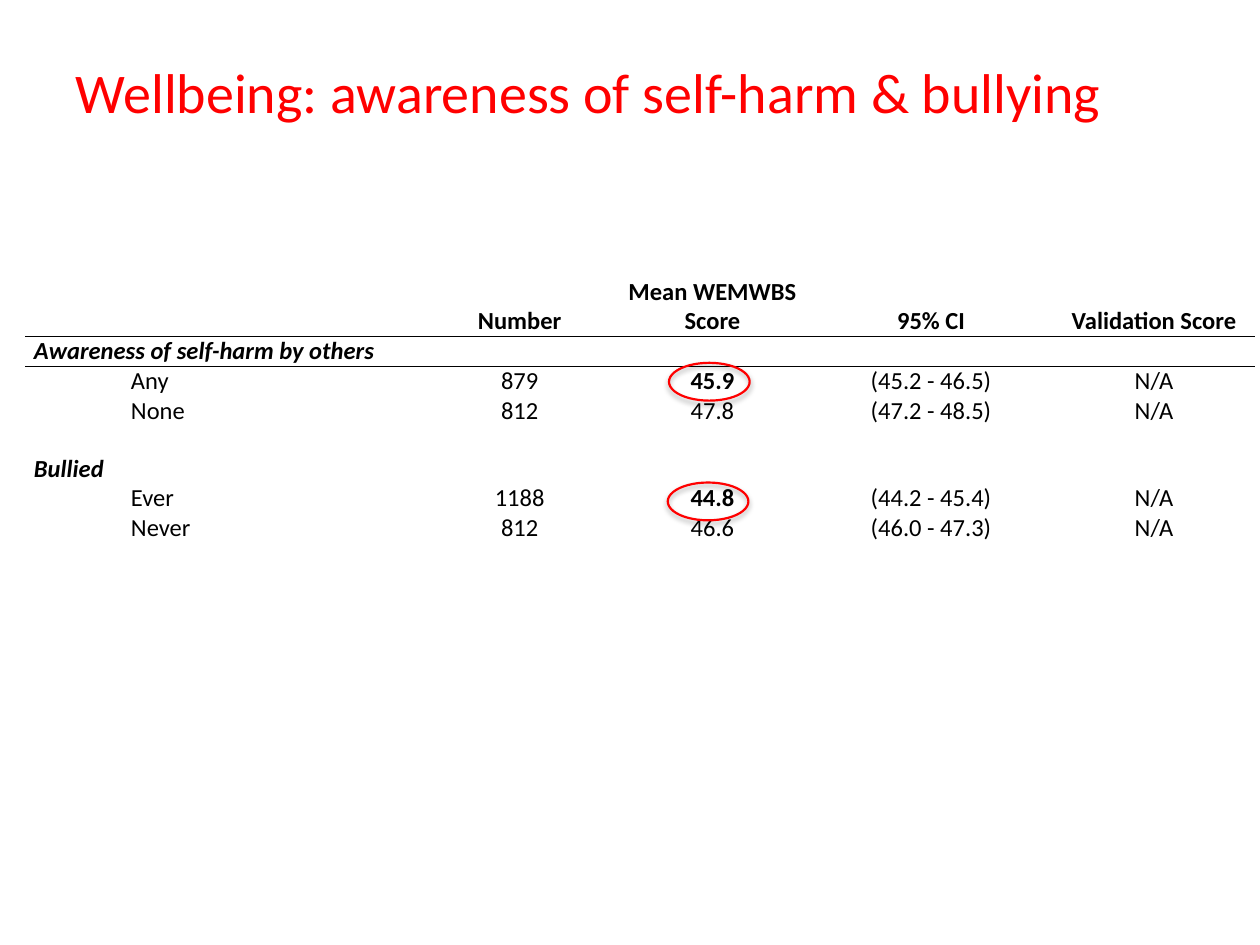
from lxml.etree import SubElement
from pptx import Presentation
from pptx.dml.color import RGBColor
from pptx.enum.shapes import MSO_SHAPE
from pptx.enum.text import MSO_ANCHOR, PP_ALIGN
from pptx.oxml import parse_xml
from pptx.oxml.ns import nsdecls, qn
from pptx.util import Inches, Pt

COLORS = {"red": "FF0000", "black": "000000"}
WIDTHS = [0.77, 2.39, 1.53, 1.53, 1.94, 1.6]
HEIGHTS = [0.48] + [0.22] * 7
PLAIN = "{2D5ABB26-0587-4C30-8999-92F81FD0307C}"
ROWS = [
    ["", "", "Number", "Mean WEMWBS Score", "95% CI", "Validation Score"],
    ["Awareness of self-harm by others"],
    ["", "Any", "879", "45.9", "(45.2 - 46.5)", "N/A"],
    ["", "None", "812", "47.8", "(47.2 - 48.5)", "N/A"],
    [""],
    ["Bullied"],
    ["", "Ever", "1188", "44.8", "(44.2 - 45.4)", "N/A"],
    ["", "Never", "812", "46.6", "(46.0 - 47.3)", "N/A"],
]
LOW = {"45.9", "44.8"}


def style(font, color, **values):
    for name, value in values.items():
        setattr(font, name, value)
    font.color.rgb = RGBColor.from_string(COLORS[color])


def place(shape, box):
    for name, value in zip(("left", "top", "width", "height"), box):
        setattr(shape, name, Inches(value))


def add_title(slide, box, text):
    title = slide.shapes.title
    place(title, box)
    frame = title.text_frame
    frame.vertical_anchor = MSO_ANCHOR.MIDDLE
    para = frame.paragraphs[0]
    para.alignment = PP_ALIGN.LEFT
    run = para.add_run()
    run.text = text
    style(run.font, "red", name="Calibri", size=Pt(32))


def add_rule(cell, side):
    cell._tc.get_or_add_tcPr().insert(0, parse_xml(
        f'<a:{side} {nsdecls("a")} w="12700"><a:solidFill>'
        f'<a:srgbClr val="{COLORS["black"]}"/></a:solidFill></a:{side}>'))


def fill_cell(cell, text, row, col):
    form = {
        "margin_left": Inches(0.07), "margin_right": Inches(0.07),
        "margin_top": 0, "margin_bottom": 0,
        "vertical_anchor": MSO_ANCHOR.TOP if row and col == 5 else MSO_ANCHOR.BOTTOM,
    }
    for name, value in form.items():
        setattr(cell, name, value)
    cell.fill.background()
    para = cell.text_frame.paragraphs[0]
    para.alignment = PP_ALIGN.CENTER if col > 1 else PP_ALIGN.LEFT
    if not text:
        SubElement(para._p, qn("a:endParaRPr")).set("sz", "1200")
        return
    run = para.add_run()
    run.text = text
    group = col == 0
    style(run.font, "black", name="Calibri", size=Pt(14),
          bold=row == 0 or group or text in LOW, italic=group)


def add_scores(slide, box):
    frame = slide.shapes.add_table(len(ROWS), len(WIDTHS), *map(Inches, box))
    table = frame.table
    table.first_row = table.horz_banding = False
    table._tbl.tblPr.find(qn("a:tableStyleId")).text = PLAIN
    for col, width in zip(table.columns, WIDTHS):
        col.width = Inches(width)
    for r, (texts, height) in enumerate(zip(ROWS, HEIGHTS)):
        table.rows[r].height = Inches(height)
        for c in range(len(WIDTHS)):
            fill_cell(table.cell(r, c), texts[c] if c < len(texts) else "", r, c)
        if len(texts) == 1:
            table.cell(r, 0).merge(table.cell(r, len(WIDTHS) - 1))
    for c in range(len(WIDTHS)):
        add_rule(table.cell(0, c), "lnB")
        add_rule(table.cell(1, c), "lnT")


def add_ring(slide, box):
    ring = slide.shapes.add_shape(MSO_SHAPE.OVAL, *map(Inches, box))
    ring.fill.background()
    ring.line.width = Pt(1.25)
    ring.line.color.rgb = RGBColor.from_string(COLORS["red"])
    ring._element.spPr.append(parse_xml(
        f'<a:effectLst {nsdecls("a")}><a:outerShdw blurRad="{Pt(3.1)}" '
        f'dist="{Pt(1.8)}" dir="5400000" rotWithShape="0">'
        f'<a:srgbClr val="{COLORS["black"]}"><a:alpha val="35000"/></a:srgbClr>'
        '</a:outerShdw></a:effectLst>'))


def main():
    deck = Presentation()
    deck.slide_width, deck.slide_height = Inches(10), Inches(7.5)
    slide = deck.slides.add_slide(deck.slide_layouts[5])
    add_title(slide, (0.5, 0.3, 9, 0.85),
              "Wellbeing: awareness of self-harm & bullying")
    add_scores(slide, (0.2, 2.19, sum(WIDTHS), sum(HEIGHTS)))
    for left, top in ((5.31, 2.88), (5.3, 3.83)):
        add_ring(slide, (left, top, 0.64, 0.3))
    deck.save("out.pptx")


if __name__ == "__main__":
    main()
